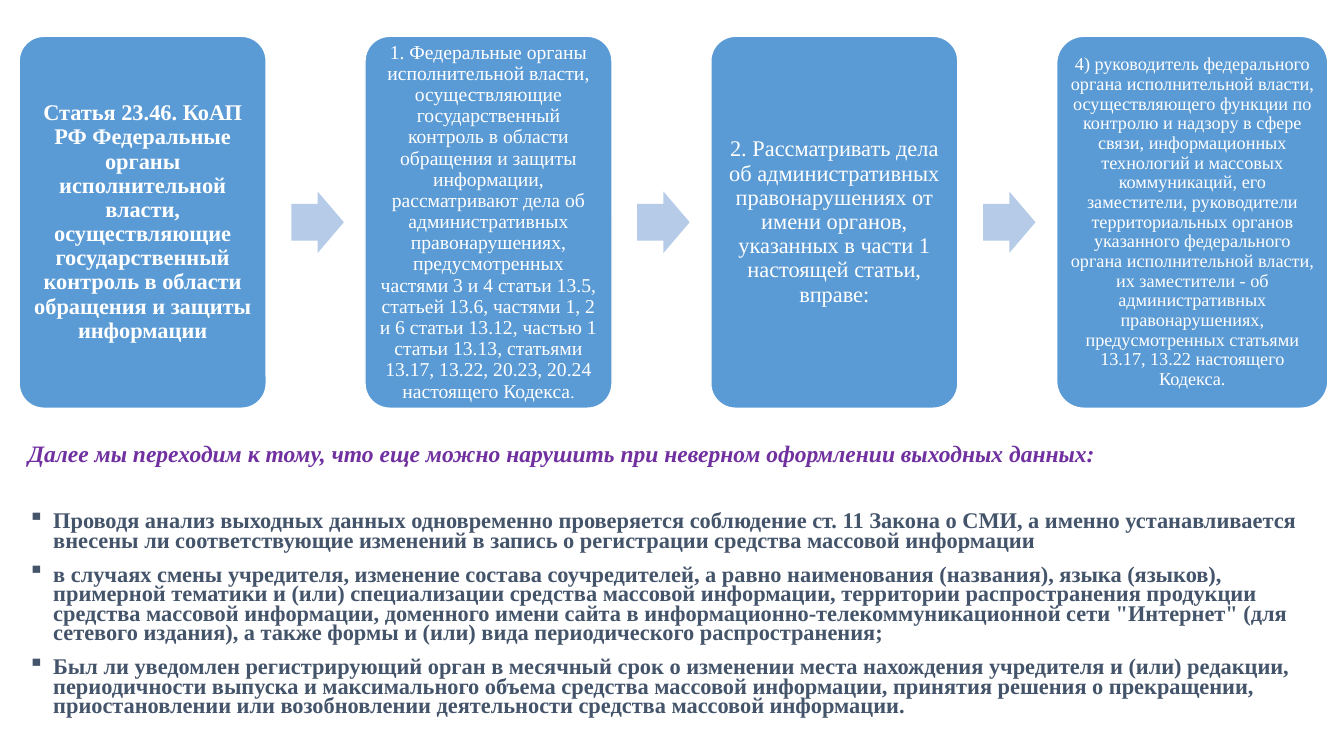
from dataclasses import dataclass

import pptx
import pptx.dml.color
import pptx.enum.shapes
import pptx.enum.text
import pptx.util
from lxml import etree

Inches = pptx.util.Inches
Pt = pptx.util.Pt
RGB = pptx.dml.color.RGBColor.from_string
Kind = pptx.enum.shapes.MSO_SHAPE
Align = pptx.enum.text.PP_ALIGN
Anchor = pptx.enum.text.MSO_ANCHOR


@dataclass
class Theme:
    font: str = "Times New Roman"
    card: str = "5B9BD5"
    arrow: str = "B5CBE7"
    white: str = "FFFFFF"
    lead: str = "7030A0"
    body: str = "44546A"
    lead_size: float = 16.8
    body_size: float = 16
    dot_size: float = 12


theme = Theme()


def style(run, size, color, bold=False, italic=False):
    font = run.font
    font.name = theme.font
    font.size = Pt(size)
    font.color.rgb = RGB(color)
    font.bold = bold
    font.italic = italic


def block(kind, left, top, width, height, fill):
    shape = slide.shapes.add_shape(
        kind, Inches(left), Inches(top), Inches(width), Inches(height))
    shape.shadow.inherit = False
    shape.fill.solid()
    shape.fill.fore_color.rgb = RGB(fill)
    shape.line.fill.background()
    return shape


deck = pptx.Presentation()
deck.slide_width = Inches(13.33)
deck.slide_height = Inches(7.5)
slide = deck.slides.add_slide(deck.slide_layouts[6])

# Row of cards: text, type size, bold, width, margin
cards = [
    ("Статья 23.46. КоАП РФ Федеральные органы исполнительной власти, "
     "осуществляющие государственный контроль в области обращения и защиты "
     "информации", 16, True, 2.45, 0.07),
    ("1. Федеральные органы исполнительной власти, осуществляющие "
     "государственный контроль в области обращения и защиты информации, "
     "рассматривают дела об административных правонарушениях, "
     "предусмотренных частями 3 и 4 статьи 13.5, статьей 13.6, частями 1, 2 "
     "и 6 статьи 13.12, частью 1 статьи 13.13, статьями 13.17, 13.22, 20.23, "
     "20.24 настоящего Кодекса", 14, False, 2.45, 0.06),
    ("2. Рассматривать дела об административных правонарушениях от имени "
     "органов, указанных в части 1 настоящей статьи, вправе:",
     16, False, 2.45, 0.07),
    ("4) руководитель федерального органа исполнительной власти, "
     "осуществляющего функции по контролю и надзору в сфере связи, "
     "информационных технологий и массовых коммуникаций, его заместители, "
     "руководители территориальных органов указанного федерального органа "
     "исполнительной власти, их заместители - об административных "
     "правонарушениях, предусмотренных статьями 13.17, 13.22 настоящего "
     "Кодекса.", 13, False, 2.69, 0.05),
]
start, pitch = 0.19, 3.43
for i, (text, size, bold, width, pad) in enumerate(cards):
    left = start + i * pitch
    card = block(Kind.ROUNDED_RECTANGLE, left, 0.36, width, 3.69, theme.card)
    card.adjustments[0] = 0.1
    card.line.color.rgb = RGB(theme.white)
    card.line.width = Pt(1)
    frame = card.text_frame
    frame.word_wrap = True
    frame.vertical_anchor = Anchor.MIDDLE
    frame.margin_left = frame.margin_right = Inches(pad)
    frame.margin_top = frame.margin_bottom = Inches(pad)
    frame.text = text
    para = frame.paragraphs[0]
    para.alignment = Align.CENTER
    para.line_spacing = 0.9
    style(para.runs[0], size, theme.white, bold)
    if i == 1:
        # The closing full stop of this card is smaller
        dot = para.add_run()
        dot.text = "."
        style(dot, theme.dot_size, theme.white)
    if i < len(cards) - 1:
        arrow = block(Kind.RIGHT_ARROW, left + 2.7, 1.9, 0.52, 0.61,
                      theme.arrow)
        arrow.adjustments[0] = 0.6
        arrow.adjustments[1] = 0.5

# Lead line and bullets
lead = ("Далее мы переходим к тому, что еще можно нарушить при неверном "
        "оформлении выходных данных:")
points = [
    "Проводя анализ выходных данных одновременно проверяется соблюдение "
    "ст. 11 Закона о СМИ, а именно устанавливается внесены ли "
    "соответствующие изменений в запись о регистрации средства массовой "
    "информации",
    "в случаях смены учредителя, изменение состава соучредителей, а равно "
    "наименования (названия), языка (языков), примерной тематики и (или) "
    "специализации средства массовой информации, территории распространения "
    "продукции средства массовой информации, доменного имени сайта в "
    "информационно-телекоммуникационной сети \"Интернет\" (для сетевого "
    "издания), а также формы и (или) вида периодического распространения;",
    "Был ли уведомлен регистрирующий орган в месячный срок о изменении места "
    "нахождения учредителя и (или) редакции, периодичности выпуска и "
    "максимального объема средства массовой информации, принятия решения о "
    "прекращении, приостановлении или возобновлении деятельности средства "
    "массовой информации.",
]
notes = slide.shapes.add_textbox(
    Inches(0.18), Inches(4.38), Inches(13), Inches(2.8))
frame = notes.text_frame
frame.word_wrap = True
frame.text = lead
para = frame.paragraphs[0]
para.line_spacing = 0.73
style(para.runs[0], theme.lead_size, theme.lead, True, True)

for i, text in enumerate(points):
    para = frame.add_paragraph()
    para.text = text
    para.line_spacing = 0.73
    para.space_before = Pt(10 if i else 33)
    props = para._p.get_or_add_pPr()
    props.set("marL", str(Inches(0.25)))
    props.set("indent", str(Inches(-0.25)))
    mark = etree.SubElement(props, pptx.oxml.ns.qn("a:buChar"))
    mark.set("char", "▪")
    style(para.runs[0], theme.body_size, theme.body, True, True)
    para.runs[0].font.italic = False

deck.save("out.pptx")
